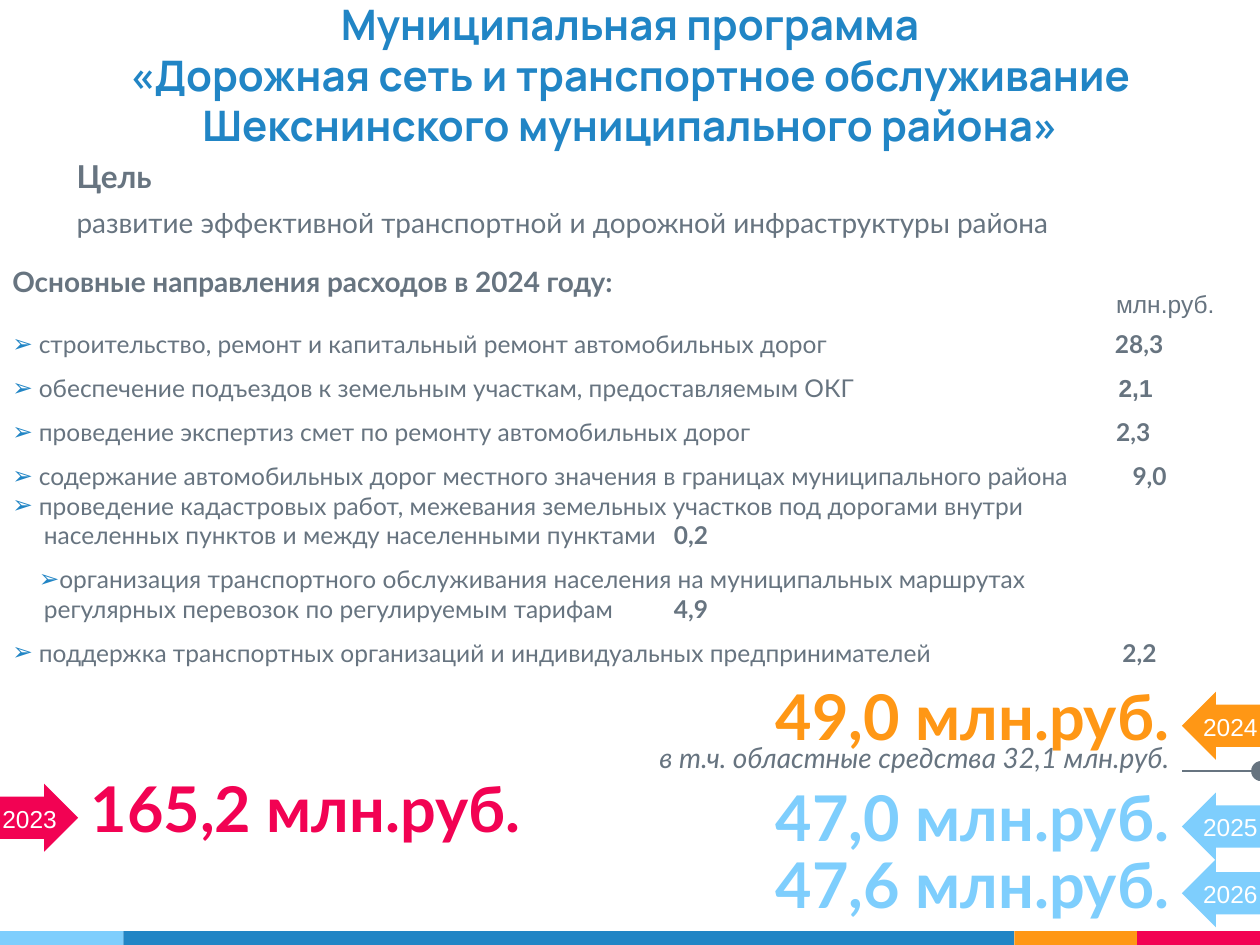
import lxml.etree
import pptx
import pptx.dml.color
import pptx.enum.shapes
import pptx.enum.text
import pptx.oxml.ns
import pptx.util

RGBColor = pptx.dml.color.RGBColor
SHAPE = pptx.enum.shapes.MSO_SHAPE
ALIGN = pptx.enum.text.PP_ALIGN
ANCHOR = pptx.enum.text.MSO_ANCHOR
Pt = pptx.util.Pt
qn = pptx.oxml.ns.qn

BLUE = RGBColor(0x21, 0x85, 0xC5)
SKY = RGBColor(0x7E, 0xCE, 0xFD)
ORANGE = RGBColor(0xFF, 0x97, 0x15)
CRIMSON = RGBColor(0xF2, 0x02, 0x53)
SLATE = RGBColor(0x67, 0x74, 0x80)
WHITE = RGBColor(0xFF, 0xFF, 0xFF)

COLUMNS, ROWS = 100, 75
SLIDE_WIDTH = pptx.util.Inches(10)
CELL = SLIDE_WIDTH // COLUMNS

DIRECTIONS = [
    ("строительство, ремонт и капитальный ремонт автомобильных дорог", "28,3", 88.5),
    ("обеспечение подъездов к земельным участкам, предоставляемым ОКГ", "2,1", 88.8),
    ("проведение экспертиз смет по ремонту автомобильных дорог", "2,3", 88.6),
    ("содержание автомобильных дорог местного значения в границах муниципального района",
     "9,0", 89.9),
    ("проведение кадастровых работ, межевания земельных участков под дорогами внутри", "", 0),
    ("населенных пунктов и между населенными пунктами", "0,2", 87.5),
    ("организация транспортного обслуживания населения на муниципальных маршрутах", "", 0),
    ("регулярных перевозок по регулируемым тарифам", "4,9", 87.1),
    ("поддержка транспортных организаций и индивидуальных предпринимателей", "2,2", 89.1),
]
SINGLE_SPACED = (4, 5, 7)
CONTINUATIONS = (5, 7)
INDENTED = 6
ARIAL_VALUE = 1


def cells(*counts):
    return [round(count * CELL) for count in counts]


def style(run, size, color, face="Lato", bold=False, italic=False):
    run.font.size = Pt(size)
    run.font.name = face
    run.font.color.rgb = color
    run.font.bold = bold
    run.font.italic = italic


def add_text(slide, box, lines, align=ALIGN.LEFT, anchor=ANCHOR.TOP, before=0, wrap=True):
    frame = slide.shapes.add_textbox(*cells(*box)).text_frame
    frame.word_wrap = wrap
    frame.vertical_anchor = anchor
    frame.margin_left = frame.margin_right = frame.margin_top = frame.margin_bottom = CELL
    frame.text = "\n".join(text for text, _ in lines)
    for paragraph, (_, look) in zip(frame.paragraphs, lines):
        paragraph.alignment = align
        paragraph.space_before = Pt(before)
        style(paragraph.runs[0], **look)
    return frame


def add_filled(slide, preset, box, color):
    shape = slide.shapes.add_shape(preset, *cells(*box))
    shape.shadow.inherit = False
    shape.fill.solid()
    shape.fill.fore_color.rgb = color
    shape.line.fill.background()
    return shape


def add_color_strip(slide, box):
    left, top, width, height = box
    for share, color in ((9.8, SKY), (70.7, BLUE), (9.75, ORANGE), (9.75, CRIMSON)):
        part = width * share / 100
        add_filled(slide, SHAPE.RECTANGLE, (left, top, part, height), color)
        left += part


def add_title(slide, box):
    title = slide.shapes.title
    title.left, title.top, title.width, title.height = cells(*box)
    frame = title.text_frame
    frame.word_wrap = True
    frame.auto_size = pptx.enum.text.MSO_AUTO_SIZE.NONE
    frame.vertical_anchor = ANCHOR.BOTTOM
    frame.margin_left = frame.margin_right = frame.margin_bottom = CELL
    frame.margin_top = 0
    frame.text = ("Муниципальная программа\v«Дорожная сеть и транспортное обслуживание "
                  "Шекснинского муниципального района»")
    frame.paragraphs[0].alignment = ALIGN.CENTER
    for run in frame.paragraphs[0].runs:
        style(run, 24, BLUE, "Manrope", bold=True)


def add_goal(slide, box):
    add_text(slide, box, [
        ("Цель", dict(size=18, color=SLATE, bold=True)),
        ("развитие эффективной транспортной и дорожной инфраструктуры района",
         dict(size=16, color=SLATE)),
    ], before=6)


def set_indent_bullet_tab(paragraph, margin, hanging, bullet, tab):
    properties = paragraph._p.get_or_add_pPr()
    properties.set("marL", str(round(margin * CELL)))
    properties.set("indent", str(round(-hanging * CELL)))
    if bullet:
        color = lxml.etree.SubElement(properties, qn("a:buClr"))
        lxml.etree.SubElement(color, qn("a:srgbClr"), val=str(BLUE))
        lxml.etree.SubElement(properties, qn("a:buFont"), typeface="Arial")
        lxml.etree.SubElement(properties, qn("a:buChar"), char="➢")
    if tab:
        stops = lxml.etree.SubElement(properties, qn("a:tabLst"))
        lxml.etree.SubElement(stops, qn("a:tab"), pos=str(round(tab * CELL)), algn="l")


def add_directions(slide, box):
    left, top, width, _ = box
    frame = add_text(slide, box, [("Основные направления расходов в 2024 году:",
                                   dict(size=16, color=SLATE, bold=True))], before=6)
    heading = frame.paragraphs[0]
    heading.line_spacing = 1.5
    heading.space_after = Pt(9)
    for index, (label, value, value_column) in enumerate(DIRECTIONS):
        paragraph = frame.add_paragraph()
        paragraph.line_spacing = 1 if index in SINGLE_SPACED else 1.5
        continued = index in CONTINUATIONS
        margin, hanging = (3.6, 1.5) if index == INDENTED else (2.5, 0) if continued else (2.1, 2.1)
        tab = value_column - left - 1 if value else 0
        set_indent_bullet_tab(paragraph, margin, hanging, not continued, tab)
        name = paragraph.add_run()
        name.text = label
        style(name, 14, SLATE)
        if value:
            amount = paragraph.add_run()
            amount.text = "\t" + value
            style(amount, 14, SLATE, "Arial" if index == ARIAL_VALUE else "Lato", bold=True)
    add_text(slide, (left + width - 12.4, top + 3.2, 10, 4),
             [("млн.руб.", dict(size=14, color=SLATE, face="Arial"))], wrap=False)


def add_year_total(slide, box, year, amount, color, points_left):
    left, top, width, height = box
    arrow_width, arrow_height = 6.2, 5.4
    text_width = width - arrow_width
    arrow_left = left + text_width if points_left else left
    text_left = left if points_left else left + arrow_width
    align = ALIGN.RIGHT if points_left else ALIGN.LEFT
    add_text(slide, (text_left, top, text_width, height),
             [(amount, dict(size=36, color=color, bold=True))], align, ANCHOR.BOTTOM)
    arrow = add_filled(slide, SHAPE.RIGHT_ARROW,
                       (arrow_left, top + 3.9, arrow_width, arrow_height), color)
    arrow.adjustments[0] = 0.62
    arrow.rotation = 180 if points_left else 0
    year_left = arrow_left + (0.6 if points_left else -0.8)
    add_text(slide, (year_left, top + 4.85, 6.4, 3.6),
             [(year, dict(size=14, color=WHITE, face="Arial"))], align, ANCHOR.MIDDLE, wrap=False)


def add_regional_share(slide, box):
    left, top, width, _ = box
    add_text(slide, box, [("в т.ч. областные средства 32,1 млн.руб.",
                           dict(size=16, color=SLATE, italic=True))], ALIGN.RIGHT, before=6)
    right, middle, dot = left + width, top + 3.4, 1.6
    add_filled(slide, SHAPE.FLOWCHART_CONNECTOR,
               (right + 5.5, middle - dot / 2, dot, dot), SLATE)
    leader = slide.shapes.add_connector(pptx.enum.shapes.MSO_CONNECTOR.STRAIGHT,
                                        *cells(right + 6.3, middle, right, middle))
    leader.line.color.rgb = SLATE
    leader.line.width = Pt(0.75)
    lxml.etree.SubElement(leader._element.spPr, qn("a:effectLst"))


def main():
    presentation = pptx.Presentation()
    presentation.slide_width = SLIDE_WIDTH
    presentation.slide_height = ROWS * CELL
    slide = presentation.slides.add_slide(presentation.slide_layouts[5])
    add_color_strip(slide, (0, 73.9, COLUMNS, 1.1))
    add_title(slide, (0, 0, COLUMNS, 12.9))
    add_goal(slide, (5.1, 11.5, 88.6, 10.4))
    add_directions(slide, (0, 18.7, COLUMNS, 37))
    add_year_total(slide, (0, 58.3, 44, 9.8), "2023", "165,2 млн.руб.", CRIMSON, False)
    add_regional_share(slide, (32, 57.8, 61.8, 5.1))
    for year, amount, color, top in (("2024", "49,0 млн.руб.", ORANGE, 51),
                                     ("2025", "47,0 млн.руб.", SKY, 59),
                                     ("2026", "47,6 млн.руб.", SKY, 64.3)):
        add_year_total(slide, (55.5, top, 44.5, 9.8), year, amount, color, True)
    presentation.save("out.pptx")


if __name__ == "__main__":
    main()
